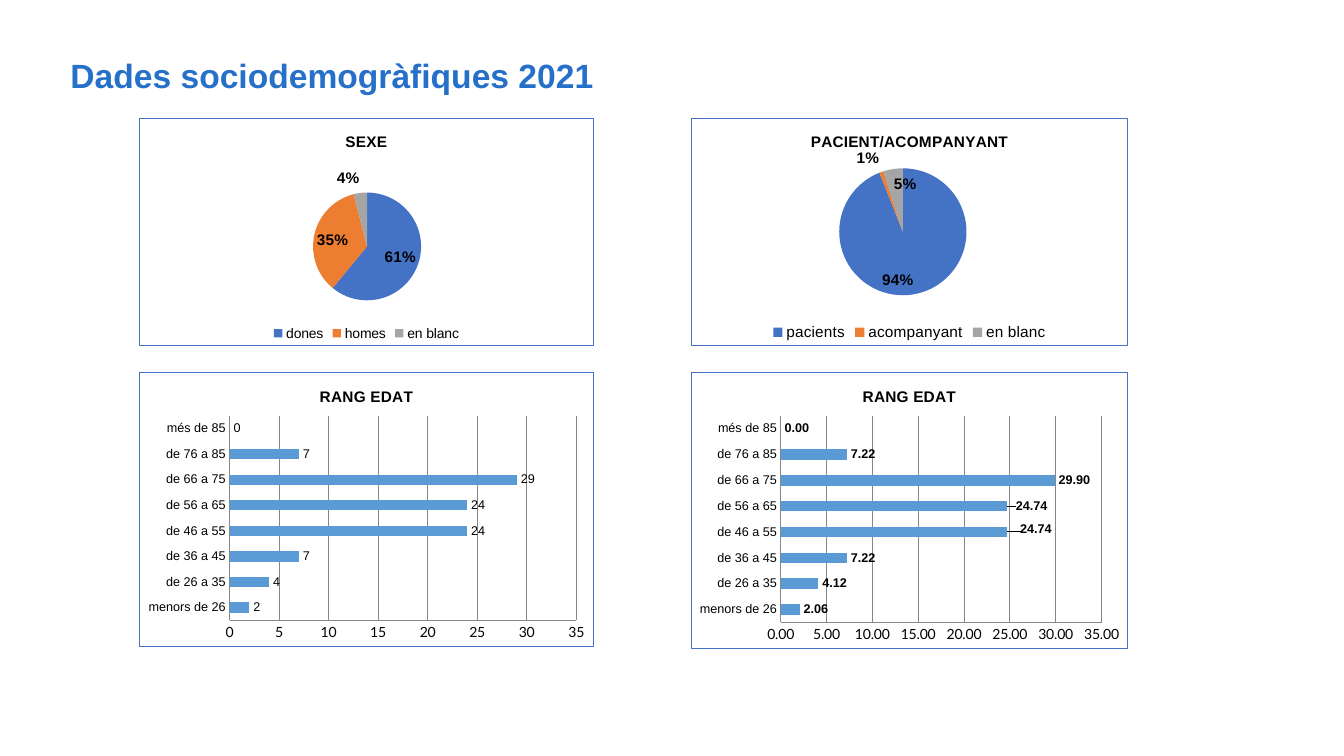
from lxml.etree import SubElement
from pptx import Presentation
from pptx.chart.data import CategoryChartData
from pptx.dml.color import RGBColor
from pptx.enum.chart import (XL_CHART_TYPE, XL_LABEL_POSITION,
                             XL_LEGEND_POSITION, XL_TICK_MARK)
from pptx.enum.text import MSO_ANCHOR
from pptx.oxml import parse_xml
from pptx.oxml.ns import nsdecls, qn
from pptx.util import Inches, Pt

BLUE, PIE_COLORS, BAR, GRID = "4472C4", ("4472C4", "ED7D31", "A5A5A5"), "5B9BD5", "878787"
AGES = ["menors de 26", "de 26 a 35", "de 36 a 45", "de 46 a 55",
        "de 56 a 65", "de 66 a 75", "de 76 a 85", "més de 85"]
LEFT, RIGHT = (1.38, 4.51), (6.85, 4.34)
TOP, BOTTOM = 1.17, 3.69


def rgb(color):
    return RGBColor.from_string(color)


def set_font(font, size, bold=False, name="Arial", color="000000"):
    font.size, font.bold, font.name = Pt(size), bold, name
    font.color.rgb = rgb(color)


def add_layout(parent, index, **values):
    """Place a chart part by hand, in fractions of the chart."""
    for old in parent.findall(qn("c:layout")):
        parent.remove(old)
    layout = parse_xml(f'<c:layout {nsdecls("c")}><c:manualLayout/></c:layout>')
    for tag, value in values.items():
        SubElement(layout[0], qn(f"c:{tag}")).set("val", str(value))
    parent.insert(index, layout)


def add_title(s, x, y, w, h, text):
    tf = s.shapes.add_textbox(Inches(x), Inches(y), Inches(w), Inches(h)).text_frame
    tf.word_wrap = True
    tf.vertical_anchor = MSO_ANCHOR.MIDDLE
    p = tf.paragraphs[0]
    p.line_spacing = 0.9
    r = p.add_run()
    r.text = text
    set_font(r.font, 24, True, color="2670CA")


def add_framed_chart(s, kind, x, y, w, h, title, cats, vals, fmt="General"):
    data = CategoryChartData(number_format=fmt)
    data.categories = cats
    data.add_series(title, vals)
    chart = s.shapes.add_chart(kind, Inches(x), Inches(y), Inches(w), Inches(h), data).chart
    set_font(chart.font, 10, name="Lato")
    # Frame
    chart._chartSpace.find(qn("c:chart")).addnext(parse_xml(
        f'<c:spPr {nsdecls("c", "a")}><a:solidFill><a:srgbClr val="FFFFFF"/></a:solidFill>'
        f'<a:ln w="9525"><a:solidFill><a:srgbClr val="{BLUE}"/></a:solidFill></a:ln></c:spPr>'))
    # Title
    chart.has_title = True
    chart.chart_title.include_in_layout = False
    r = chart.chart_title.text_frame.paragraphs[0].add_run()
    r.text = title
    set_font(r.font, 11, True)
    return chart


def add_pie(s, x, y, w, h, title, cats, vals, position, legend_size):
    chart = add_framed_chart(s, XL_CHART_TYPE.PIE, x, y, w, h, title, cats, vals)
    chart.plots[0].vary_by_categories = True
    series = chart.plots[0].series[0]
    for i, color in enumerate(PIE_COLORS):
        fill = series.points[i].format.fill
        fill.solid()
        fill.fore_color.rgb = rgb(color)
    # Percent labels
    labels = series.data_labels
    labels.show_percentage, labels.show_value = True, False
    labels.number_format, labels.number_format_is_linked = "0%", False
    labels.position = position
    set_font(labels.font, 11, True)
    # Legend
    chart.has_legend = True
    chart.legend.position = XL_LEGEND_POSITION.BOTTOM
    chart.legend.include_in_layout = False
    set_font(chart.legend.font, legend_size)
    return chart


def add_bars(s, x, y, w, h, vals, fmt, bold):
    chart = add_framed_chart(s, XL_CHART_TYPE.BAR_CLUSTERED, x, y, w, h,
                             "RANG EDAT", AGES, vals, fmt)
    chart.has_legend = False
    plot = chart.plots[0]
    plot.gap_width, plot.vary_by_categories = 150, False
    series = plot.series[0]
    series.format.fill.solid()
    series.format.fill.fore_color.rgb = rgb(BAR)
    # Value labels
    labels = series.data_labels
    labels.show_value = True
    labels.number_format, labels.number_format_is_linked = fmt, False
    labels.position = XL_LABEL_POSITION.OUTSIDE_END
    set_font(labels.font, 9, bold)
    # Axes
    for axis in (chart.category_axis, chart.value_axis):
        axis.major_tick_mark = axis.minor_tick_mark = XL_TICK_MARK.NONE
        axis.format.line.color.rgb = rgb(GRID)
    set_font(chart.category_axis.tick_labels.font, 9)
    value_axis = chart.value_axis
    value_axis.has_major_gridlines = True
    value_axis.major_gridlines.format.line.color.rgb = rgb(GRID)
    value_axis.tick_labels.number_format = fmt
    value_axis.tick_labels.number_format_is_linked = False
    set_font(value_axis.tick_labels.font, 10, name="Lato")
    return chart


def point_label(chart, index, size, position):
    """Give one point its own label and return the label's element."""
    label = chart.plots[0].series[0].points[index].data_label
    set_font(label.font, size, True)
    label.position = position
    return chart._chartSpace.xpath(f'.//c:dLbl[c:idx/@val="{index}"]')[0]


def build_slide(prs):
    s = prs.slides.add_slide(prs.slide_layouts[6])
    add_title(s, 0.6, 0.54, 12.19, 0.46, "Dades sociodemogràfiques 2021")

    # Shares by sex and by role
    add_pie(s, LEFT[0], TOP, LEFT[1], 2.26, "SEXE", ["dones", "homes", "en blanc"],
            [61, 35, 4], XL_LABEL_POSITION.BEST_FIT, 10)
    roles = add_pie(s, RIGHT[0], TOP, RIGHT[1], 2.26, "PACIENT/ACOMPANYANT",
                    ["pacients", "acompanyant", "en blanc"], [94, 1, 5],
                    XL_LABEL_POSITION.INSIDE_END, 11)
    add_layout(roles._chartSpace.find(".//" + qn("c:plotArea")), 0, layoutTarget="inner",
               xMode="edge", yMode="edge", x=0.04, y=0.22, w=0.89, h=0.56)
    label = point_label(roles, 1, 11, XL_LABEL_POSITION.OUTSIDE_END)
    label.find(qn("c:showVal")).set("val", "0")
    label.find(qn("c:showPercent")).set("val", "1")

    # Age ranges: counts and percentages
    add_bars(s, LEFT[0], BOTTOM, LEFT[1], 2.73, [2, 4, 7, 24, 24, 29, 7, 0], "General", False)
    ages = add_bars(s, RIGHT[0], BOTTOM, RIGHT[1], 2.75,
                    [2.06, 4.12, 7.22, 24.74, 24.74, 29.9, 7.22, 0], "0.00", True)
    for index, dx, dy in ((3, 0.02, -0.01), (4, 0.01, 0)):
        label = point_label(ages, index, 9, XL_LABEL_POSITION.OUTSIDE_END)
        add_layout(label, 1, x=dx, y=dy)


def main():
    prs = Presentation()
    prs.slide_width, prs.slide_height = Inches(13.33), Inches(7.5)
    build_slide(prs)
    prs.save("out.pptx")


if __name__ == "__main__":
    main()
